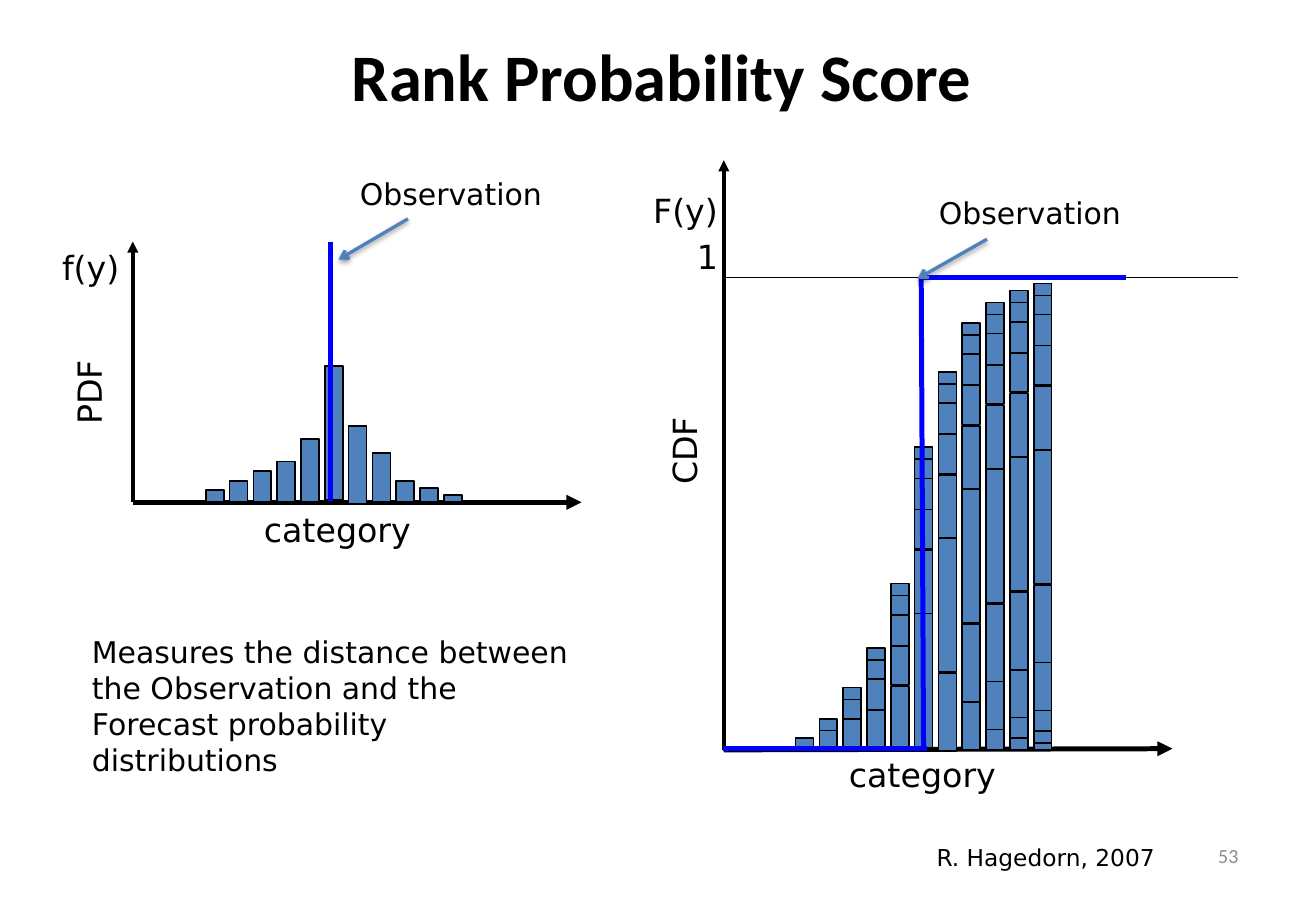
from typing import NamedTuple, Optional

from lxml.etree import SubElement
from pptx import Presentation
from pptx.dml.color import RGBColor
from pptx.enum.shapes import MSO_CONNECTOR as Connector, MSO_SHAPE as Shape
from pptx.enum.text import MSO_ANCHOR as Anchor, PP_ALIGN as Align
from pptx.oxml.ns import qn
from pptx.util import Inches, Pt

BLACK, BLUE, STEEL, GREY = "000000", "0000FF", "4F81BD", "8C8C8C"
BAR_WIDTH, BAR_PITCH = 0.15, 0.2


class Category(NamedTuple):
    rise: float    # top of the bar above the baseline
    height: float
    step: float    # what the bar adds to a cumulative column


class Line(NamedTuple):
    start: tuple[float, float]
    end: tuple[float, float]
    color: str = BLACK
    width: float = 3
    arrow: Optional[str] = None
    shadow: bool = False


class Label(NamedTuple):
    text: str
    box: tuple[float, float, float, float]
    size: float = 20
    align: Align = Align.LEFT
    wrap: bool = False
    before: float = 0
    rotation: float = 0
    font: str = "DejaVu Sans"
    color: str = BLACK
    anchor: Anchor = Anchor.TOP


CATEGORIES = [
    Category(0.10, 0.10, 0.08), Category(0.18, 0.18, 0.18),
    Category(0.26, 0.26, 0.25), Category(0.34, 0.34, 0.35),
    Category(0.53, 0.53, 0.53), Category(1.14, 1.12, 1.13),
    Category(0.64, 0.65, 0.64), Category(0.41, 0.41, 0.40),
    Category(0.18, 0.18, 0.16), Category(0.12, 0.12, 0.12),
    Category(0.06, 0.06, 0.06),
]

PDF_AXES = [
    Line((1.11, 4.2), (1.11, 2.02), width=2.25, arrow="triangle"),
    Line((1.11, 4.2), (4.86, 4.2), arrow="triangle"),
]
PDF_OBSERVATION = Line((2.76, 4.19), (2.76, 2.02), BLUE)
CDF_AXES = [
    Line((6.05, 6.27), (6.05, 1.34), width=2.25, arrow="triangle"),
    Line((6.05, 6.27), (9.8, 6.26), arrow="triangle"),
]
CDF_OBSERVATION = [
    Line((7.72, 6.26), (7.7, 2.32), BLUE),
    Line((6.05, 2.32), (10.35, 2.32), width=1),
    Line((6.04, 6.26), (7.75, 6.26), BLUE),
    Line((7.7, 2.32), (9.41, 2.32), BLUE),
]
POINTERS = [
    Line((3.41, 1.83), (2.83, 2.17), STEEL, 2, "arrow", True),
    Line((8.25, 2), (7.67, 2.33), STEEL, 2, "arrow", True),
]

LABELS = [
    Label("53", (7.88, 6.95, 2.57, 0.4), 12, Align.RIGHT, wrap=True,
          font="Calibri", color=GREY, anchor=Anchor.MIDDLE),
    Label("category", (0.86, 4.21, 3.92, 0.43), align=Align.CENTER, wrap=True, before=4),
    Label("category", (5.75, 6.26, 3.92, 0.43), align=Align.CENTER, wrap=True, before=4),
    Label("f(y)", (0.42, 2.02, 0.72, 0.44), before=4),
    Label("F(y)\n1", (5.31, 1.54, 0.79, 0.84), align=Align.RIGHT, before=4),
    Label("PDF", (0.37, 3.06, 0.75, 0.44), align=Align.CENTER, rotation=270),
    Label("CDF", (5.33, 3.55, 0.78, 0.44), align=Align.CENTER, rotation=270),
    Label("R. Hagedorn, 2007", (7.73, 7, 2.07, 0.34), 14),
    Label("Observation", (2.91, 1.42, 1.73, 0.4), 18),
    Label("Observation", (7.75, 1.58, 1.73, 0.4), 18),
    Label("Measures the distance between the Observation and the "
          "Forecast probability distributions", (0.67, 5.25, 4.25, 1.31), 18, wrap=True),
]


def rgb(color: str) -> RGBColor:
    return RGBColor.from_string(color)


def write(frame, text: str, *, size: float, font: str, color: str = BLACK,
          align: Align = Align.LEFT, anchor: Anchor = Anchor.TOP,
          wrap: bool = True, before: float = 0, bold: bool = False) -> None:
    frame.text = text
    frame.word_wrap = wrap
    frame.vertical_anchor = anchor
    for paragraph in frame.paragraphs:
        paragraph.alignment = align
        paragraph.space_before = Pt(before)
        for run in paragraph.runs:
            run.font.size, run.font.name, run.font.bold = Pt(size), font, bold
            run.font.color.rgb = rgb(color)


def draw_label(slide, label: Label) -> None:
    box = slide.shapes.add_textbox(*map(Inches, label.box))
    box.rotation = label.rotation
    write(box.text_frame, label.text, size=label.size, font=label.font,
          color=label.color, align=label.align, anchor=label.anchor,
          wrap=label.wrap, before=label.before)


def draw_line(slide, line: Line) -> None:
    connector = slide.shapes.add_connector(
        Connector.STRAIGHT, *map(Inches, line.start + line.end))
    connector.line.color.rgb = rgb(line.color)
    connector.line.width = Pt(line.width)
    if line.arrow:
        SubElement(connector.line._get_or_add_ln(), qn("a:tailEnd"), type=line.arrow)
    effects = SubElement(connector._element.spPr, qn("a:effectLst"))
    if line.shadow:
        shadow = SubElement(effects, qn("a:outerShdw"), blurRad=str(Pt(3.1)),
                            dist=str(Pt(1.6)), dir="5400000", rotWithShape="0")
        shade = SubElement(shadow, qn("a:srgbClr"), val=BLACK)
        SubElement(shade, qn("a:alpha"), val="38000")


def draw_bar(slide, left: float, top: float, height: float) -> None:
    bar = slide.shapes.add_shape(
        Shape.RECTANGLE, *map(Inches, (left, top, BAR_WIDTH, height)))
    bar.shadow.inherit = False
    bar.fill.solid()
    bar.fill.fore_color.rgb = rgb(STEEL)
    bar.line.color.rgb = rgb(BLACK)
    bar.line.width = Pt(1)


def draw_histogram(slide, left: float, baseline: float, cumulative: bool) -> None:
    """Draw one bar per category, with all earlier ones on top if cumulative."""
    for index, category in enumerate(CATEGORIES):
        x = left + index * BAR_PITCH * 0.995
        top = baseline - category.rise
        draw_bar(slide, x, top, category.height)
        if cumulative:
            for earlier in reversed(CATEGORIES[:index]):
                top -= earlier.step
                draw_bar(slide, x, top, earlier.height)


def main() -> None:
    deck = Presentation()
    deck.slide_width, deck.slide_height = Inches(11), Inches(7.5)
    slide = deck.slides.add_slide(deck.slide_layouts[5])

    title = slide.shapes.title
    title.left, title.top, title.width, title.height = map(Inches, (0.58, 0, 9.9, 1.25))
    write(title.text_frame, "Rank Probability Score", size=40, font="Calibri",
          align=Align.CENTER, anchor=Anchor.MIDDLE, bold=True)

    for axis in PDF_AXES + CDF_AXES:
        draw_line(slide, axis)
    draw_histogram(slide, 1.72, 4.2, cumulative=False)
    draw_histogram(slide, 6.65, 6.27, cumulative=True)
    for line in [PDF_OBSERVATION, *CDF_OBSERVATION, *POINTERS]:
        draw_line(slide, line)
    for label in LABELS:
        draw_label(slide, label)

    deck.save("out.pptx")


if __name__ == "__main__":
    main()
